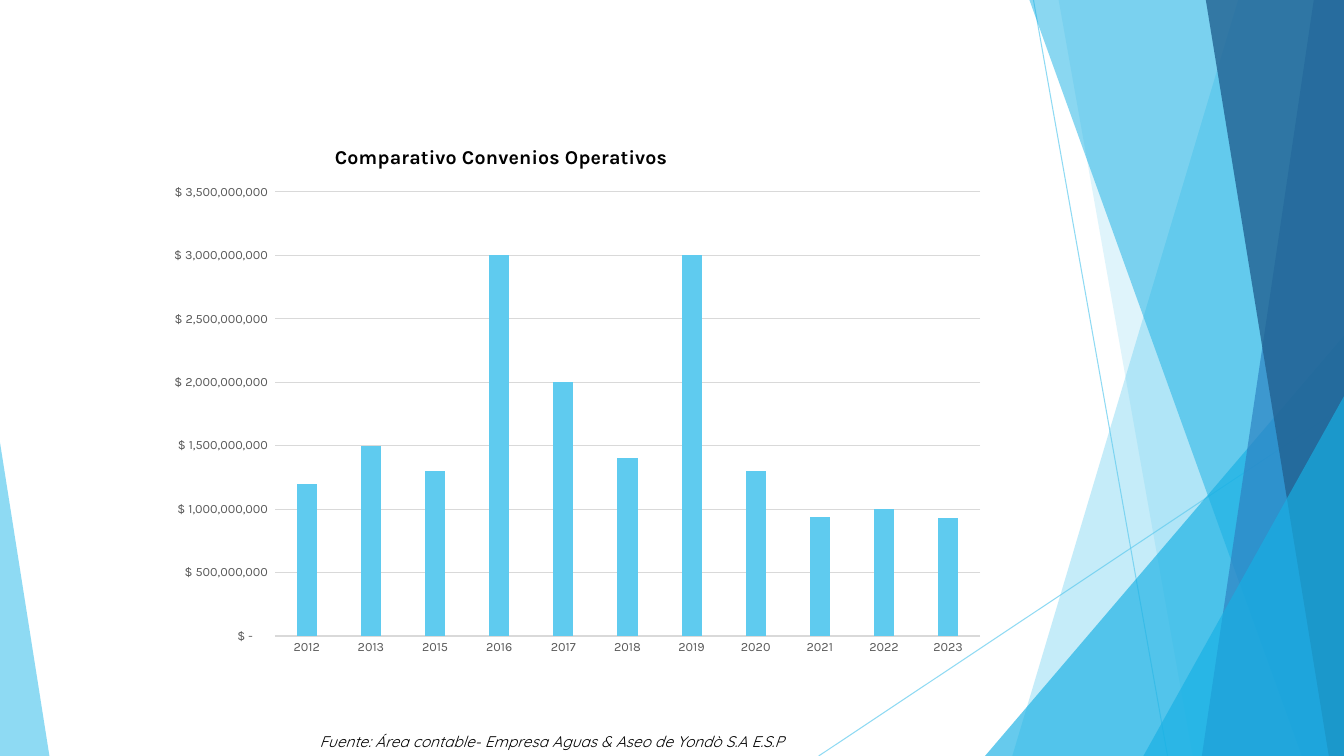
from lxml import etree
from pptx import Presentation
from pptx.chart.data import CategoryChartData
from pptx.dml.color import RGBColor
from pptx.enum.chart import XL_CHART_TYPE as CT, XL_TICK_MARK as TM
from pptx.enum.shapes import MSO_CONNECTOR as CN, MSO_SHAPE as SHAPE
from pptx.enum.text import MSO_ANCHOR, PP_ALIGN
from pptx.oxml import parse_xml
from pptx.oxml.ns import nsdecls, qn
from pptx.util import Inches, Pt

SKY = RGBColor(0x5F, 0xCB, 0xEF)
CYAN = RGBColor(0x17, 0xB0, 0xE4)
BLUE = RGBColor(0x2E, 0x83, 0xC3)
NAVY = RGBColor(0x22, 0x62, 0x92)
BLACK = RGBColor(0, 0, 0)
GREY = RGBColor(0x59, 0x59, 0x59)
RULE = RGBColor(0xD9, 0xD9, 0xD9)
WIDTH, HEIGHT = 13.33, 7.5
MONEY = '_-"$"\\ * #,##0_-;\\-"$"\\ * #,##0_-;_-"$"\\ * "-"??_-;_-@_-'
AGREEMENTS = {
    "2012": 1200000000, "2013": 1500000000, "2015": 1300000000,
    "2016": 3000000000, "2017": 2000000000, "2018": 1400000000,
    "2019": 3000000000, "2020": 1300000000, "2021": 940000000,
    "2022": 1000000000, "2023": 930000000,
}


def set_format(target, **values):
    """Set each given attribute on the target."""
    for name, value in values.items():
        setattr(target, name, value)


def set_font(font, color, **values):
    """Set the colour and other values of a font."""
    font.color.rgb = color
    set_format(font, **values)


def set_alpha(sp, percent):
    """Set the opacity of the first colour of a shape."""
    color = next(sp._element.spPr.iter(qn("a:srgbClr")))
    etree.SubElement(color, qn("a:alpha"), val=str(percent * 1000))


def paint(sp, color, percent):
    """Fill a shape with a translucent colour and no outline."""
    sp.shadow.inherit = False
    sp.fill.solid()
    sp.fill.fore_color.rgb = color
    sp.line.fill.background()
    set_alpha(sp, percent)


def add_ray(s, x1, y1, x2, y2):
    """Draw a thin translucent line."""
    ray = s.shapes.add_connector(CN.STRAIGHT, *map(Inches, (x1, y1, x2, y2)))
    ray.line.color.rgb = SKY
    ray.line.width = Pt(0.75)
    set_alpha(ray, 70)
    etree.SubElement(ray._element.spPr, qn("a:effectLst"))


def add_band(s, top_x, bottom_x, color, percent):
    """Draw a full-height band from a slanted edge to the right side."""
    corners = [(top_x, 0), (WIDTH, 0), (WIDTH, HEIGHT), (bottom_x, HEIGHT)]
    points = [(Inches(x), Inches(y)) for x, y in corners]
    builder = s.shapes.build_freeform(*points[0])
    builder.add_line_segments(points[1:], close=True)
    paint(builder.convert_to_shape(), color, percent)


def add_wedge(s, left, width, height, peak, color, percent):
    """Draw a triangle that stands on the bottom edge."""
    box = map(Inches, (left, HEIGHT - height, width, height))
    sp = s.shapes.add_shape(SHAPE.ISOSCELES_TRIANGLE, *box)
    sp.adjustments[0] = peak
    paint(sp, color, percent)


def add_backdrop(s):
    """Draw the overlapping facets on both sides of the slide."""
    add_ray(s, 10.25, 0, 11.58, HEIGHT)
    add_ray(s, WIDTH, 4.03, 8.12, HEIGHT)
    add_band(s, 12.28, 10.04, SKY, 36)
    add_band(s, 10.5, 11.83, SKY, 20)
    add_wedge(s, 9.77, 3.56, 4.17, 1, CYAN, 66)
    add_band(s, 10.21, 12.91, CYAN, 50)
    add_band(s, 13.03, 11.92, BLUE, 70)
    add_band(s, 11.96, 13.18, NAVY, 80)
    add_wedge(s, 11.34, 1.99, 3.57, 1, CYAN, 66)
    add_wedge(s, 0, 0.49, 3.11, 0, SKY, 70)


def set_layout(parent, **values):
    """Place a chart part by fractions of the chart area."""
    for old in parent.findall(qn("c:layout")):
        parent.remove(old)
    modes = {"xMode": "edge", "yMode": "edge"}
    if "w" in values:
        modes = {"layoutTarget": "inner", **modes}
    parts = "".join(f'<c:{k} val="{v}"/>' for k, v in {**modes, **values}.items())
    layout = parse_xml(f'<c:layout {nsdecls("c")}><c:manualLayout>{parts}'
                       '</c:manualLayout></c:layout>')
    text = parent.find(qn("c:tx"))
    parent.insert(0 if text is None else 1, layout)


def add_agreements_chart(s, left, top, width, height):
    """Add the column chart of agreements by year."""
    data = CategoryChartData(number_format=MONEY)
    data.categories = list(AGREEMENTS)
    data.add_series("Series 1", list(AGREEMENTS.values()))
    box = map(Inches, (left, top, width, height))
    chart = s.shapes.add_chart(CT.COLUMN_CLUSTERED, *box, data).chart
    set_font(chart.font, BLACK, name="Karla", size=Pt(10))
    chart.has_legend = False

    tf = chart.chart_title.text_frame
    tf.text = "Comparativo Convenios Operativos"
    set_font(tf.paragraphs[0].runs[0].font, BLACK, name="Karla", size=Pt(14), bold=True)
    chart.chart_title.include_in_layout = False
    set_layout(chart.chart_title._element, x=0.21, y=0.03)
    set_layout(chart._chartSpace.chart.plotArea, x=0.143, y=0.124, w=0.837, h=0.822)

    plot = chart.plots[0]
    set_format(plot, gap_width=219, overlap=-27, vary_by_categories=False)
    fill = plot.series[0].format.fill
    fill.solid()
    fill.fore_color.rgb = SKY

    years, amounts = chart.category_axis, chart.value_axis
    for axis in (years, amounts):
        set_format(axis, major_tick_mark=TM.NONE, minor_tick_mark=TM.NONE)
        set_font(axis.tick_labels.font, GREY, name="Karla", size=Pt(9))
    set_format(amounts, minimum_scale=0, maximum_scale=3500000000,
               major_unit=500000000, has_major_gridlines=True)
    set_format(amounts.tick_labels, number_format=MONEY, number_format_is_linked=False)
    amounts.format.line.fill.background()
    for line in (years.format.line, amounts.major_gridlines.format.line):
        line.color.rgb = RULE
        line.width = Pt(0.75)


def add_source_note(s, left, top, width, height):
    """Add the centred source line below the chart."""
    tf = s.shapes.add_textbox(*map(Inches, (left, top, width, height))).text_frame
    set_format(tf, word_wrap=True, vertical_anchor=MSO_ANCHOR.TOP)
    p = tf.paragraphs[0]
    set_format(p, alignment=PP_ALIGN.CENTER, line_spacing=1.07, space_after=Pt(8))
    r = p.add_run()
    r.text = "Fuente: Área contable- Empresa Aguas & Aseo de Yondò S.A E.S.P"
    set_font(r.font, BLACK, name="Quicksand", size=Pt(11), italic=True)


def main():
    """Build the slide and save it."""
    prs = Presentation()
    set_format(prs, slide_width=Inches(WIDTH), slide_height=Inches(HEIGHT))
    s = prs.slides.add_slide(prs.slide_layouts[6])
    add_backdrop(s)
    add_agreements_chart(s, 1.53, 1.24, 8.36, 5.36)
    add_source_note(s, 2.14, 7.2, 6.67, 0.3)
    prs.save("out.pptx")


if __name__ == "__main__":
    main()
